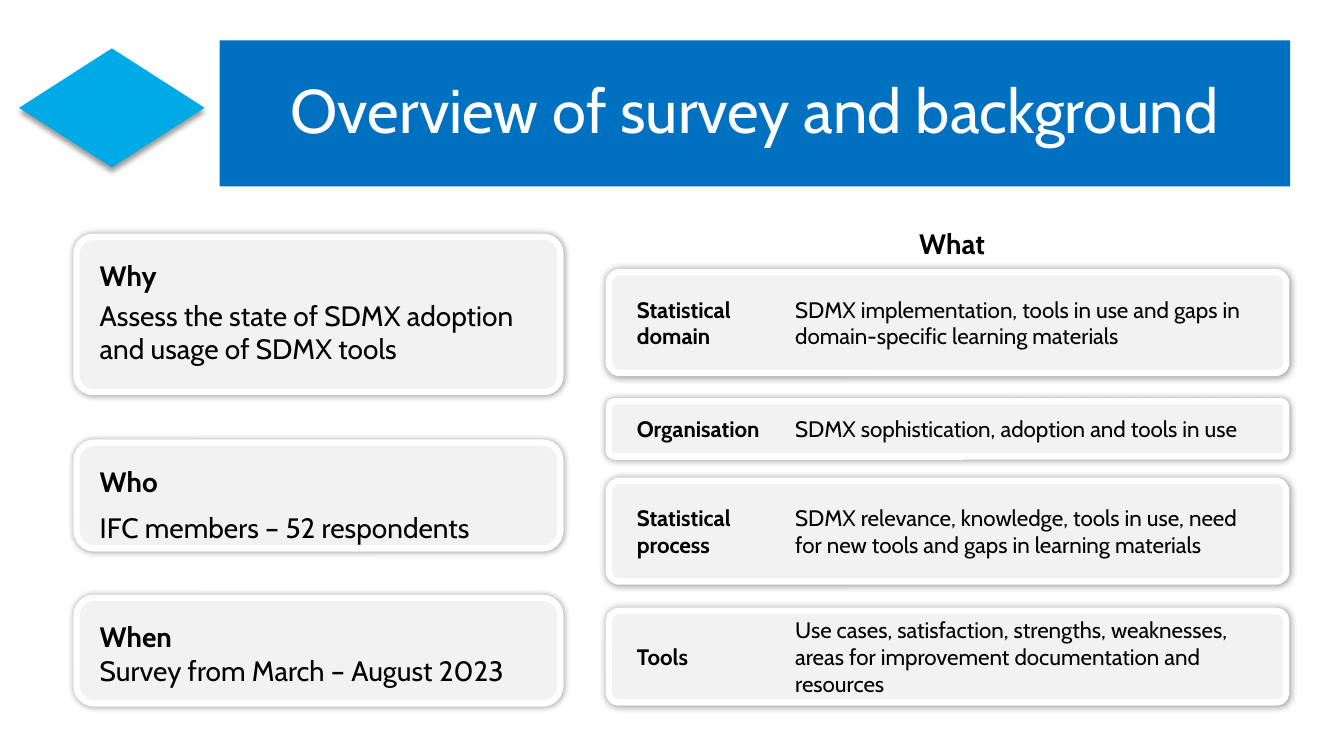
from collections import namedtuple

from lxml.etree import SubElement
from pptx import Presentation
from pptx.dml.color import RGBColor
from pptx.enum.shapes import MSO_SHAPE
from pptx.enum.text import MSO_ANCHOR, PP_ALIGN
from pptx.oxml.ns import qn
from pptx.util import Inches, Pt

COLUMNS, ROWS = 133.33, 75
CELL = Inches(0.1)
FONT = "Cabin"
BLACK, WHITE, PANEL = "000000", "FFFFFF", "F2F2F2"
TITLE_BLUE, MARK_BLUE = "0070C0", "00AAE6"

Box = namedtuple("Box", "column row columns rows")

FACTS = [
    ("Why", "Assess the state of SDMX adoption and usage of SDMX tools", 23.5, 15.4, 5.6, 1, 0.106),
    ("Who", "IFC members – 52 respondents", 43.9, 10.5, 4.6, 1.5, 0.1667),
    ("When", "Survey from March – August 2023", 59.3, 10.5, 5, 1, 0.1667),
]
TOPICS = [
    ("Statistical domain", "SDMX implementation, tools in use and gaps in domain-specific learning materials", 27, 10, 12.3),
    ("Organisation", "SDMX sophistication, adoption and tools in use", 39.8, 5.5, 15.7),
    ("Statistical process", "SDMX relevance, knowledge, tools in use, need for new tools and gaps in learning materials", 47.7, 10, 12.3),
    ("Tools", "Use cases, satisfaction, strengths, weaknesses, areas for improvement documentation and resources", 60.6, 9.1, 12.3),
]


def color(value):
    return RGBColor.from_string(value)


def place(box):
    return [round(length * CELL) for length in box]


def inside(box, column, row, columns, rows):
    return Box(box.column + column, box.row + row, columns, rows)


def add_span(para, text, size, ink=BLACK, bold=False):
    span = para.add_run()
    span.text = text
    span.font.name = FONT
    span.font.size = Pt(size)
    span.font.bold = bold
    span.font.color.rgb = color(ink)


def add_text(page, box, text, size, bold=False, spacing=1, anchor=MSO_ANCHOR.TOP):
    frame = page.shapes.add_textbox(*place(box)).text_frame
    frame.word_wrap = True
    frame.vertical_anchor = anchor
    para = frame.paragraphs[0]
    para.line_spacing = spacing
    add_span(para, text, size, bold=bold)


def add_shadow(shape, blur, distance, direction):
    shape.shadow.inherit = False
    effects = shape._element.spPr.find(qn("a:effectLst"))
    shadow = SubElement(effects, qn("a:outerShdw"), blurRad=str(Pt(blur)),
                        dist=str(Pt(distance)), dir=str(direction * 60000),
                        algn="ctr", rotWithShape="0")
    ink = SubElement(shadow, qn("a:srgbClr"), val=BLACK)
    SubElement(ink, qn("a:alpha"), val="40000")


def add_panel(page, box, rounding):
    panel = page.shapes.add_shape(MSO_SHAPE.ROUNDED_RECTANGLE, *place(box))
    panel.adjustments[0] = rounding
    panel.fill.solid()
    panel.fill.fore_color.rgb = color(PANEL)
    panel.line.color.rgb = color(WHITE)
    panel.line.width = Pt(4.5)
    add_shadow(panel, 5, 0, 0)


def add_mark(page, box):
    mark = page.shapes.add_shape(MSO_SHAPE.DIAMOND, *place(box))
    mark.fill.solid()
    mark.fill.fore_color.rgb = color(MARK_BLUE)
    mark.line.fill.background()
    add_shadow(mark, 4, 3, 90)


def add_title(page, box, text):
    title = page.shapes.title
    title.left, title.top, title.width, title.height = place(box)
    title.fill.solid()
    title.fill.fore_color.rgb = color(TITLE_BLUE)
    title.text_frame.vertical_anchor = MSO_ANCHOR.MIDDLE
    para = title.text_frame.paragraphs[0]
    para.alignment = PP_ALIGN.CENTER
    para.line_spacing = 0.9
    add_span(para, text, 44, WHITE)


def add_fact(page, box, heading, detail, detail_row, spacing, rounding):
    add_panel(page, box, rounding)
    add_text(page, inside(box, 1.3, 0, 11.3, 5), heading, 20, bold=True, spacing=1.5)
    detail_box = inside(box, 1.3, detail_row, 45.1, box.rows - detail_row)
    add_text(page, detail_box, detail, 20, spacing=spacing)


def add_topic(page, box, heading, detail, heading_columns):
    add_panel(page, box, 0.106)
    add_text(page, inside(box, 1.8, 0, heading_columns, box.rows), heading, 16,
             bold=True, anchor=MSO_ANCHOR.MIDDLE)
    add_text(page, inside(box, 17.5, 0, 48.9, box.rows), detail, 16,
             anchor=MSO_ANCHOR.MIDDLE)


def add_facts(page, box):
    for heading, detail, row, rows, detail_row, spacing, rounding in FACTS:
        fact_box = Box(box.column, row, box.columns, rows)
        add_fact(page, fact_box, heading, detail, detail_row, spacing, rounding)


def add_topics(page, box):
    add_text(page, inside(box, 29.8, 0, 11.8, 5.4), "What", 20, bold=True, spacing=1.5)
    for heading, detail, row, rows, heading_columns in TOPICS:
        topic_box = Box(box.column, row, box.columns, rows)
        add_topic(page, topic_box, heading, detail, heading_columns)


def main():
    deck = Presentation()
    deck.slide_width = round(COLUMNS * CELL)
    deck.slide_height = ROWS * CELL
    page = deck.slides.add_slide(deck.slide_layouts[5])
    add_mark(page, Box(1.9, 4.8, 18.4, 11.8))
    add_title(page, Box(21.8, 4, 106.2, 14.5), "Overview of survey and background")
    add_facts(page, Box(7.6, 23.5, 48, 46.3))
    add_topics(page, Box(60.4, 20.3, 67.2, 49.4))
    deck.save("out.pptx")


if __name__ == "__main__":
    main()
